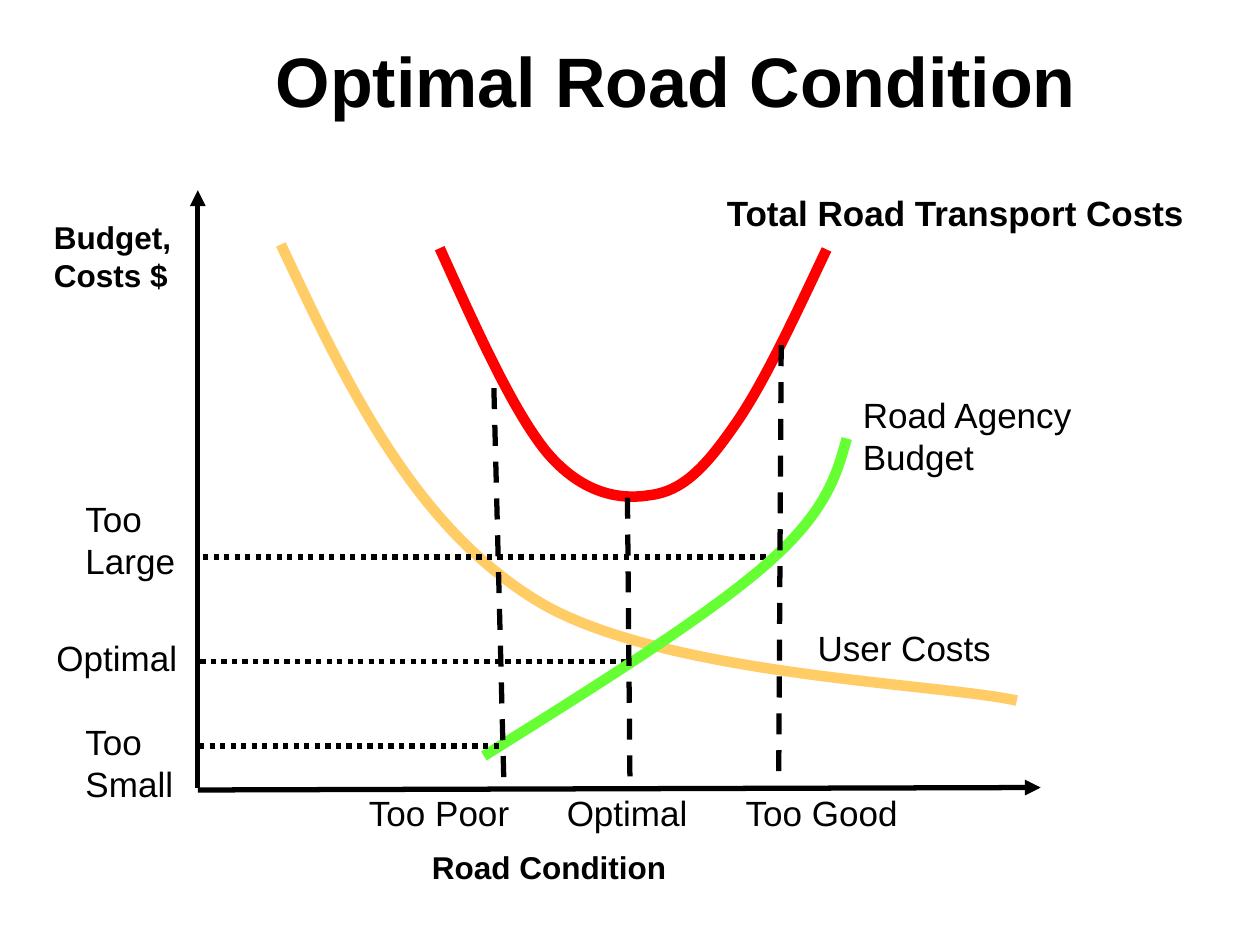
from pptx import Presentation
from pptx import util as u
from pptx.dml.color import RGBColor
from pptx.enum import dml, shapes, text
from pptx.oxml import ns
from pptx.oxml.xmlchemy import OxmlElement


def color(hex_code):
    return RGBColor.from_string(hex_code)


class CostDiagram:
    font = "Arial"
    ink = "000000"
    line_width = 3
    curve_width = 6

    def __init__(self, slide):
        self.slide = slide

    def label(self, wording, left, top, width, height, size=20, bold=False, wrap=False):
        box = self.slide.shapes.add_textbox(*map(u.Inches, (left, top, width, height)))
        frame = box.text_frame
        frame.text = wording
        frame.word_wrap = wrap
        frame.auto_size = text.MSO_AUTO_SIZE.SHAPE_TO_FIT_TEXT
        for paragraph in frame.paragraphs:
            for run in paragraph.runs:
                run.font.name = self.font
                run.font.size = u.Pt(size)
                run.font.bold = bold
                run.font.color.rgb = color(self.ink)

    def line(self, start, end, dash=None, arrow=False):
        connector = self.slide.shapes.add_connector(
            shapes.MSO_CONNECTOR.STRAIGHT, *map(u.Inches, (*start, *end))
        )
        connector.line.color.rgb = color(self.ink)
        connector.line.width = u.Pt(self.line_width)
        if dash:
            connector.line.dash_style = dash
        properties = connector._element.spPr
        if arrow:
            head = OxmlElement("a:tailEnd")
            head.set("type", "triangle")
            properties.find(ns.qn("a:ln")).append(head)
        properties.append(OxmlElement("a:effectLst"))

    def curve(self, hex_code, start, *controls):
        points = [(u.Inches(x), u.Inches(y)) for x, y in controls]
        builder = self.slide.shapes.build_freeform(*map(u.Inches, start))
        builder.add_line_segments(points, close=False)
        outline = builder.convert_to_shape()
        segments = list(outline._element.iter(ns.qn("a:lnTo")))
        for first in range(0, len(segments), 3):
            bezier = OxmlElement("a:cubicBezTo")
            segments[first].addprevious(bezier)
            for segment in segments[first:first + 3]:
                bezier.append(segment[0])
                segment.getparent().remove(segment)
        outline.shadow.inherit = False
        outline.fill.background()
        outline.line.color.rgb = color(hex_code)
        outline.line.width = u.Pt(self.curve_width)


def main():
    deck = Presentation()
    deck.slide_width, deck.slide_height = u.Inches(10), u.Inches(7.5)
    diagram = CostDiagram(deck.slides.add_slide(deck.slide_layouts[6]))
    dotted = dml.MSO_LINE.ROUND_DOT
    dashed = dml.MSO_LINE.DASH

    diagram.label("Optimal Road Condition", 2.09, 0.25, 6.62, 0.77, size=40, bold=True)

    diagram.line((1.57, 6.25), (1.57, 1.51), arrow=True)
    diagram.line((1.57, 6.27), (8.26, 6.25), arrow=True)
    diagram.label("Budget, Costs $", 0.33, 1.68, 1.17, 0.74, size=18, bold=True, wrap=True)
    diagram.label("Road Condition", 3.33, 6.68, 2.92, 0.4, size=18, bold=True, wrap=True)

    user_costs = [(2.23, 1.94), (2.75, 3.05), (3.28, 4.16), (4.25, 4.76),
                  (5.22, 5.36), (7.43, 5.42), (8.07, 5.56)]
    total_costs = [(3.49, 1.97), (3.78, 2.61), (4.07, 3.26), (4.34, 3.59),
                   (4.62, 3.92), (4.92, 3.97), (5.16, 3.93),
                   (5.41, 3.9), (5.59, 3.72), (5.82, 3.39),
                   (6.05, 3.07), (6.3, 2.53), (6.56, 1.98)]
    agency_budget = [(3.84, 6), (4.72, 5.45), (5.6, 4.9), (6.08, 4.48),
                     (6.56, 4.06), (6.64, 3.77), (6.72, 3.48)]

    diagram.curve("FFCC66", *user_costs)
    diagram.curve("FF0000", *total_costs)
    diagram.line((6.16, 4.42), (1.56, 4.42), dash=dotted)
    diagram.line((1.59, 5.25), (5, 5.25), dash=dotted)
    diagram.curve("66FF33", *agency_budget)
    for top, bottom in [((3.92, 3.08), (4, 6.25)),
                        ((6.2, 2.74), (6.18, 6.25)),
                        ((4.98, 3.95), (5, 6.25))]:
        diagram.line(top, bottom, dash=dashed)
    diagram.line((1.58, 5.92), (4, 5.92), dash=dotted)

    diagram.label("Total Road Transport Costs", 5.67, 1.47, 3.86, 0.43, bold=True)
    diagram.label("Road Agency\nBudget", 6.75, 3.07, 1.9, 0.77)
    diagram.label("User Costs", 6.39, 4.92, 1.67, 0.43)

    diagram.label("Too\nLarge", 0.58, 3.9, 0.96, 0.77)
    diagram.label("Optimal", 0.35, 5, 1.23, 0.43)
    diagram.label("Too\nSmall", 0.58, 5.67, 1.08, 0.77, wrap=True)

    for condition, left, width in [("Too Poor", 2.83, 1.42),
                                   ("Optimal", 4.4, 1.23),
                                   ("Too Good", 5.82, 1.51)]:
        diagram.label(condition, left, 6.23, width, 0.43)

    deck.save("out.pptx")


if __name__ == "__main__":
    main()
